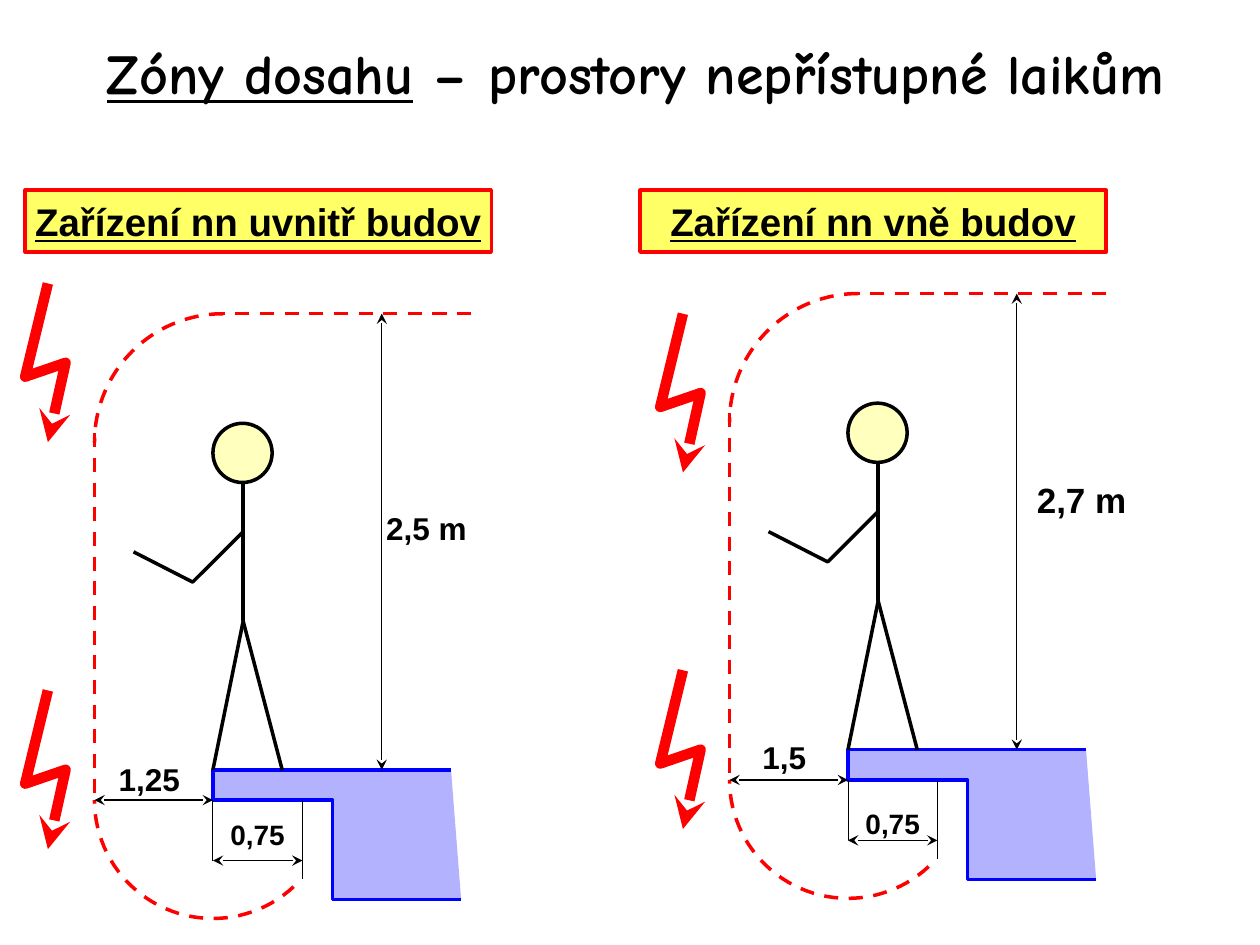
from dataclasses import dataclass
from math import cos, radians, sin

from lxml import etree
from pptx import Presentation
from pptx.dml.color import RGBColor
from pptx.enum.dml import MSO_LINE
from pptx.enum.shapes import MSO_CONNECTOR, MSO_SHAPE
from pptx.enum.text import MSO_ANCHOR, MSO_AUTO_SIZE, PP_ALIGN
from pptx.oxml.ns import qn
from pptx.util import Inches, Pt

STRAIGHT = MSO_CONNECTOR.STRAIGHT
RECTANGLE, OVAL = MSO_SHAPE.RECTANGLE, MSO_SHAPE.OVAL
DASH = MSO_LINE.DASH
MIDDLE, CENTER = MSO_ANCHOR.MIDDLE, PP_ALIGN.CENTER
GROW = MSO_AUTO_SIZE.SHAPE_TO_FIT_TEXT

COLORS = {"black": "000000", "red": "FF0000", "blue": "0000FF", "yellow": "FFFF66"}
Point = tuple[float, float]

# Distances from the platform's upper left corner
REACH = 0.94      # sideways edge of the zone
STEP = 0.24       # thickness of the overhanging slab
TOP = -3.62       # upper edge of the zone
CURVE = 1.02      # radius of the upper bend
RECESS = 0.71     # reach under the slab


@dataclass
class Label:
    text: str
    left: float
    top: float
    width: float
    height: float
    size: int


@dataclass
class Scene:
    corner: Point
    heading: str
    heading_left: float
    labels: list[Label]
    bolts: list[Point]

    def at(self, x: float, y: float) -> Point:
        return self.corner[0] + x, self.corner[1] + y


def rgb(color: str) -> RGBColor:
    return RGBColor.from_string(COLORS[color])


def style_line(line, color: str, width: float, dashed: bool = False) -> None:
    line.color.rgb = rgb(color)
    line.width = Pt(width)
    if dashed:
        line.dash_style = DASH


def fill_shape(shape, color: str, opacity: int = 100) -> None:
    shape.fill.solid()
    shape.fill.fore_color.rgb = rgb(color)
    if opacity < 100:
        tint = shape._element.spPr.find(qn("a:solidFill"))[0]
        etree.SubElement(tint, qn("a:alpha"), val=str(opacity * 1000))


def add_arrowheads(line, *ends: str) -> None:
    """Add stealth heads; ends are headEnd and tailEnd, in that order."""
    outline = line._get_or_add_ln()
    for end in ends:
        etree.SubElement(outline, qn(f"a:{end}"), type="stealth")


def add_line(page, start: Point, end: Point, color: str = "black",
             width: float = 2, dashed: bool = False):
    line = page.shapes.add_connector(STRAIGHT, *map(Inches, start + end))
    style_line(line.line, color, width, dashed)
    etree.SubElement(line._element.spPr, qn("a:effectLst"))
    return line


def add_dimension(page, start: Point, end: Point) -> None:
    line = add_line(page, start, end, width=0.75)
    add_arrowheads(line.line, "headEnd", "tailEnd")


def add_path(page, points: list[Point], color: str, width: float = 2,
             dashed: bool = False):
    corners = [(Inches(x), Inches(y)) for x, y in points]
    builder = page.shapes.build_freeform(*corners[0], scale=1.0)
    builder.add_line_segments(corners[1:], close=False)
    shape = builder.convert_to_shape()
    shape.shadow.inherit = False
    shape.fill.background()
    style_line(shape.line, color, width, dashed)
    return shape


def add_arc(page, center: Point, radius: float, first: int, last: int) -> None:
    """Draw a dashed arc between two angles, in degrees clockwise from the right."""
    count = 40
    angles = [radians(first + (last - first) * i / count) for i in range(count + 1)]
    points = [(center[0] + radius * cos(a), center[1] + radius * sin(a)) for a in angles]
    add_path(page, points, "red", dashed=True)


def add_span(para, text: str, size: int, font: str, underline: bool = False) -> None:
    span = para.add_run()
    span.text = text
    span.font.name, span.font.size = font, Pt(size)
    span.font.bold, span.font.underline = True, underline
    span.font.color.rgb = rgb("black")


def prepare_text(box, margin: float):
    frame = box.text_frame
    frame.word_wrap = True
    frame.vertical_anchor = MIDDLE
    frame.margin_left = frame.margin_right = Inches(0.04)
    frame.margin_top = frame.margin_bottom = Inches(margin)
    para = frame.paragraphs[0]
    para.alignment = CENTER
    return para


def add_title(page) -> None:
    box = page.shapes.add_textbox(Inches(0.2), Inches(0.13), Inches(9.69), Inches(0.89))
    para = prepare_text(box, 0.05)
    add_span(para, "Zóny dosahu", 32, "Comic Neue", underline=True)
    add_span(para, " – prostory nepřístupné laikům", 32, "Comic Neue")


def add_heading(page, scene: Scene) -> None:
    box = page.shapes.add_shape(RECTANGLE, Inches(scene.heading_left), Inches(1.51),
                                Inches(3.7), Inches(0.49))
    box.shadow.inherit = False
    fill_shape(box, "yellow")
    style_line(box.line, "red", 2)
    add_span(prepare_text(box, 0.05), scene.heading, 22, "Arial", underline=True)


def add_label(page, label: Label) -> None:
    box = page.shapes.add_textbox(Inches(label.left), Inches(label.top),
                                  Inches(label.width), Inches(label.height))
    add_span(prepare_text(box, 0.04), label.text, label.size, "Arial")
    box.text_frame.auto_size = GROW


def add_platform(page, scene: Scene) -> None:
    outline = [(1.89, 0), (0, 0), (0, STEP), (0.95, STEP), (0.95, 1.03), (1.97, 1.03)]
    platform = add_path(page, [scene.at(*point) for point in outline], "blue")
    fill_shape(platform, "blue", 30)


def add_person(page, scene: Scene) -> None:
    size = Inches(0.47)
    head = page.shapes.add_shape(OVAL, *map(Inches, scene.at(0, -2.75)), size, size)
    head.shadow.inherit = False
    fill_shape(head, "yellow", 42)
    style_line(head.line, "black", 2)
    hip = scene.at(0.24, -1.18)
    for end in ((0.24, -2.27), (0, 0), (0.55, 0)):
        add_line(page, hip, scene.at(*end))
    arm = [(0.24, -1.89), (-0.16, -1.49), (-0.63, -1.73)]
    add_path(page, [scene.at(*point) for point in arm], "black")


def add_zone(page, scene: Scene) -> None:
    bend = CURVE - REACH
    add_line(page, scene.at(2.05, TOP), scene.at(bend, TOP), "red", dashed=True)
    add_line(page, scene.at(-REACH, -2.67), scene.at(-REACH, STEP), "red", dashed=True)
    add_arc(page, scene.at(bend, TOP + CURVE), CURVE, 270, 180)
    add_arc(page, scene.at(0, STEP), REACH, 47, 180)


def add_dimensions(page, scene: Scene) -> None:
    add_dimension(page, scene.at(1.34, TOP), scene.at(1.34, 0))
    add_dimension(page, scene.at(0, STEP), scene.at(-REACH, STEP))
    add_dimension(page, scene.at(0, 0.72), scene.at(RECESS, 0.72))
    for x, bottom in ((0, 0.72), (RECESS, 0.87)):
        add_line(page, scene.at(x, STEP), scene.at(x, bottom), width=0.5)


def add_bolt(page, left: float, top: float) -> None:
    zigzag = [(0.18, 0), (0, 0.74), (0.32, 0.63), (0.18, 1.26)]
    bolt = add_path(page, [(left + x, top + y) for x, y in zigzag], "red", 6)
    add_arrowheads(bolt.line, "tailEnd")


def add_scene(page, scene: Scene) -> None:
    add_heading(page, scene)
    for draw in (add_platform, add_person, add_zone, add_dimensions):
        draw(page, scene)
    for label in scene.labels:
        add_label(page, label)
    for bolt in scene.bolts:
        add_bolt(page, *bolt)


SCENES = [
    Scene((1.69, 6.11), "Zařízení nn uvnitř budov", 0.2,
          [Label("2,5 m", 2.95, 4, 0.87, 0.38, 18), Label("0,75", 1.61, 6.45, 0.87, 0.35, 16),
           Label("1,25", 0.75, 5.99, 0.87, 0.38, 18)], [(0.2, 2.25), (0.2, 5.48)]),
    Scene((6.73, 5.95), "Zařízení nn vně budov", 5.08,
          [Label("2,7 m", 8.15, 3.76, 0.87, 0.41, 20), Label("0,75", 6.77, 6.36, 0.63, 0.35, 16),
           Label("1,5", 5.79, 5.82, 0.87, 0.38, 18)], [(5.24, 2.49), (5.24, 5.32)]),
]


def main() -> None:
    deck = Presentation()
    deck.slide_width, deck.slide_height = Inches(10), Inches(7.5)
    page = deck.slides.add_slide(deck.slide_layouts[6])
    add_title(page)
    for scene in SCENES:
        add_scene(page, scene)
    deck.save("out.pptx")


if __name__ == "__main__":
    main()
